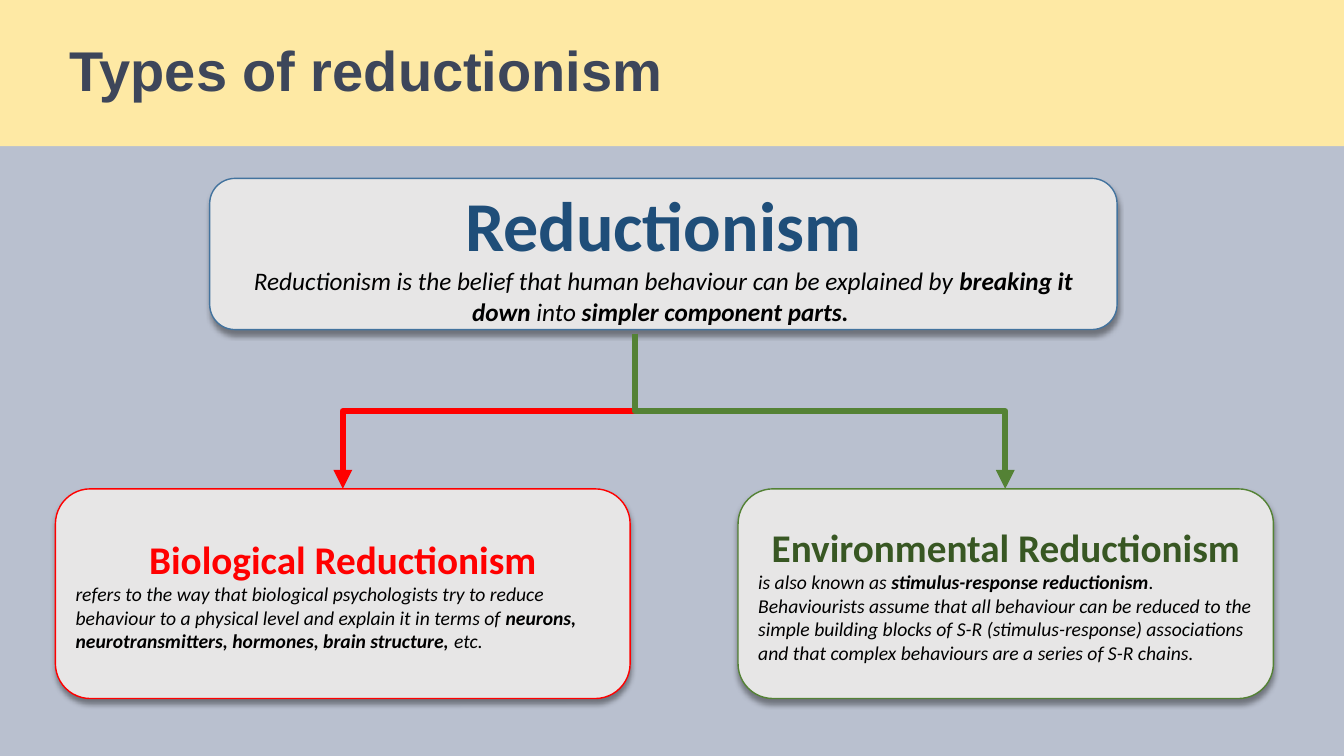
"""Build a slide showing the two types of reductionism."""
from lxml import etree
from pptx import Presentation
from pptx.dml.color import RGBColor
from pptx.enum import shapes, text
from pptx.oxml import ns
from pptx.util import Inches, Pt

BACKGROUND = RGBColor(0xB9, 0xC0, 0xCF)
BANNER = RGBColor(0xFE, 0xE9, 0xA4)
TITLE = RGBColor(0x3D, 0x46, 0x5A)
PANEL = RGBColor(0xE7, 0xE6, 0xE6)
BLUE_LINE = RGBColor(0x43, 0x73, 0x9E)
BLUE = RGBColor(0x1F, 0x4E, 0x79)
RED = RGBColor(0xFF, 0x00, 0x00)
GREEN_LINE = RGBColor(0x54, 0x82, 0x35)
GREEN = RGBColor(0x38, 0x57, 0x23)
BLACK = RGBColor(0x00, 0x00, 0x00)

CENTER, LEFT = text.PP_ALIGN.CENTER, text.PP_ALIGN.LEFT
STEM_X, STEM_TOP, BRANCH_TOP = 6.3, 3.31, 4.85


def add_panel(slide, kind, box, fill):
    shape = slide.shapes.add_shape(kind, *[Inches(value) for value in box])
    shape.shadow.inherit = False
    shape.fill.solid()
    shape.fill.fore_color.rgb = fill
    shape.text_frame.word_wrap = True
    shape.text_frame.vertical_anchor = text.MSO_ANCHOR.MIDDLE
    return shape


def style(paragraph, font_name, size, color, alignment):
    paragraph.alignment = alignment
    paragraph.font.name = font_name
    paragraph.font.size = Pt(size)
    paragraph.font.color.rgb = color


presentation = Presentation()
presentation.slide_width = Inches(13.33)
presentation.slide_height = Inches(7.5)
slide = presentation.slides.add_slide(presentation.slide_layouts[6])
slide.background.fill.solid()
slide.background.fill.fore_color.rgb = BACKGROUND

banner = add_panel(slide, shapes.MSO_SHAPE.RECTANGLE, (0, 0, 13.33, 1.45), BANNER)
banner.line.fill.background()
banner.text_frame.margin_left = Inches(0.69)
paragraph = banner.text_frame.paragraphs[0]
paragraph.text = "Types of reductionism"
paragraph.line_spacing = 0.9
style(paragraph, "Arial", 40, TITLE, LEFT)
paragraph.font.bold = True

panels = [
    ((2.08, 1.77, 9, 1.5), BLUE_LINE, BLUE, "Reductionism", 50, 18, CENTER, [
        ("Reductionism is the belief that human behaviour can be explained by ", False),
        ("breaking it down", True),
        (" into ", False),
        ("simpler component parts. ", True),
    ]),
    ((0.55, BRANCH_TOP, 5.7, 2.08), RED, RED, "Biological Reductionism", 28, 14, LEFT, [
        ("refers to the way that biological psychologists try to reduce behaviour to a "
         "physical level and explain it in terms of ", False),
        ("neurons, neurotransmitters, hormones, brain structure,", True),
        (" etc.", False),
    ]),
    ((7.32, BRANCH_TOP, 5.31, 2.08), GREEN_LINE, GREEN, "Environmental Reductionism", 28, 14, LEFT, [
        ("is also known as ", False),
        ("stimulus-response reductionism", True),
        (". Behaviourists assume that all behaviour can be reduced to the simple building "
         "blocks of S-R (stimulus-response) associations and that complex behaviours are a "
         "series of S-R chains.", False),
    ]),
]
for box, line_color, heading_color, heading, heading_size, body_size, alignment, body in panels:
    panel = add_panel(slide, shapes.MSO_SHAPE.ROUNDED_RECTANGLE, box, PANEL)
    panel.line.color.rgb = line_color
    panel.line.width = Pt(1)
    effects = panel._element.spPr.find(ns.qn("a:effectLst"))
    shadow = etree.SubElement(effects, ns.qn("a:outerShdw"), blurRad=str(Pt(4)),
                              dist=str(Pt(3)), dir="5400000", rotWithShape="0")
    shadow_color = etree.SubElement(shadow, ns.qn("a:srgbClr"), val="000000")
    etree.SubElement(shadow_color, ns.qn("a:alpha"), val="40000")

    paragraph = panel.text_frame.paragraphs[0]
    paragraph.text = heading
    style(paragraph, "Calibri", heading_size, heading_color, CENTER)
    paragraph.font.bold = True
    paragraph = panel.text_frame.add_paragraph()
    style(paragraph, "Calibri", body_size, BLACK, alignment)
    paragraph.font.italic = True
    for wording, bold in body:
        run = paragraph.add_run()
        run.text = wording
        run.font.bold = bold

half_drop = (BRANCH_TOP - STEM_TOP) / 2
middle_y = STEM_TOP + half_drop
for target_x, color, side, rotation in [(3.4, RED, -1, 90), (9.97, GREEN_LINE, 1, 270)]:
    middle_x = (STEM_X + target_x) / 2
    half_span = abs(target_x - STEM_X) / 2
    connector = slide.shapes.add_connector(
        shapes.MSO_CONNECTOR.ELBOW,
        Inches(middle_x + side * half_drop), Inches(middle_y - half_span),
        Inches(middle_x - side * half_drop), Inches(middle_y + half_span))
    connector.line.color.rgb = color
    connector.line.width = Pt(4.5)
    properties = connector._element.spPr
    properties.find(ns.qn("a:xfrm")).set("rot", str(rotation * 60000))
    etree.SubElement(properties.find(ns.qn("a:ln")), ns.qn("a:tailEnd"), type="triangle")
    etree.SubElement(properties, ns.qn("a:effectLst"))

presentation.save("out.pptx")
